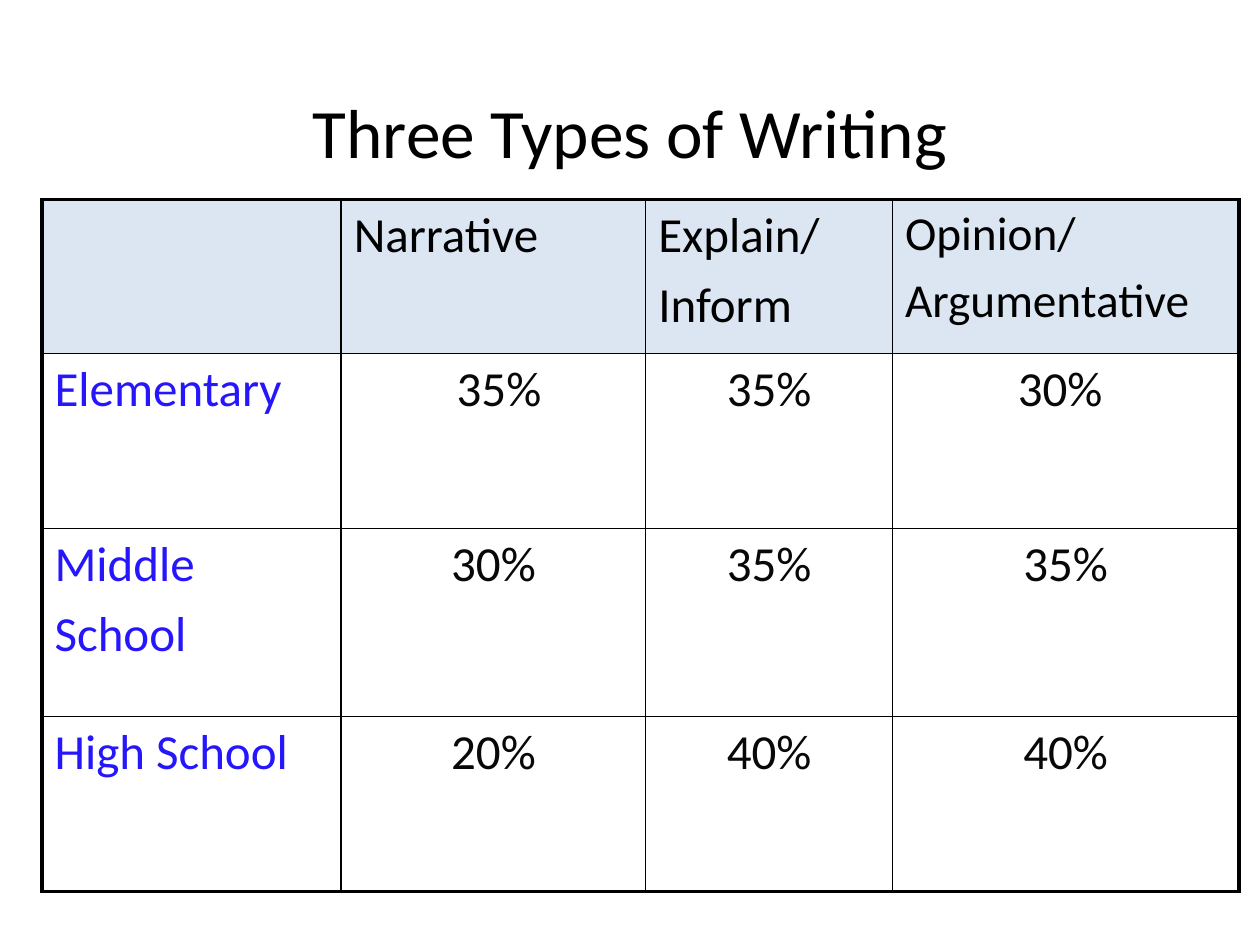
import pptx
import pptx.dml.color
import pptx.enum.text
import pptx.oxml
import pptx.oxml.ns
import pptx.util
from dataclasses import dataclass

Pt = pptx.util.Pt
Align = pptx.enum.text.PP_ALIGN
Anchor = pptx.enum.text.MSO_ANCHOR


@dataclass(frozen=True)
class Theme:
    font: str = "Calibri"
    title_size: float = 39.6
    cell_size: float = 28
    tight_size: float = 27
    ink: str = "000000"
    value: str = "080808"
    level: str = "2616FC"
    header_fill: str = "DCE6F2"
    outer_line: float = 2.25
    inner_line: float = 1
    space_before: float = 0.2  # share of the type size


class SlideBuilder:
    def __init__(self, page, theme):
        self.page = page
        self.theme = theme

    def set_text(self, frame, text, size, color, align):
        frame.text = text
        for index, para in enumerate(frame.paragraphs):
            para.alignment = align
            if index:
                para.space_before = Pt(size * self.theme.space_before)
            for span in para.runs:
                span.font.name = self.theme.font
                span.font.size = Pt(size)
                span.font.bold = False
                span.font.color.rgb = pptx.dml.color.RGBColor.from_string(color)

    def title(self, text, left, top, width, height):
        box = self.page.shapes.add_textbox(Pt(left), Pt(top), Pt(width), Pt(height))
        box.text_frame.word_wrap = True
        box.text_frame.vertical_anchor = Anchor.MIDDLE
        self.set_text(box.text_frame, text, self.theme.title_size, self.theme.ink, Align.CENTER)

    def borders(self, cell, widths):
        properties = cell._tc.get_or_add_tcPr()
        for index, (side, width) in enumerate(widths.items()):
            line = pptx.oxml.parse_xml(
                f'<a:ln{side} {pptx.oxml.ns.nsdecls("a")} w="{Pt(width)}">'
                f'<a:solidFill><a:srgbClr val="{self.theme.ink}"/></a:solidFill></a:ln{side}>')
            properties.insert(index, line)

    def table(self, rows, left, top, column_widths, row_heights):
        theme = self.theme
        last_row, last_column = len(row_heights) - 1, len(column_widths) - 1
        grid = self.page.shapes.add_table(
            len(row_heights), len(column_widths), Pt(left), Pt(top),
            Pt(sum(column_widths)), Pt(sum(row_heights))).table
        grid.first_row = grid.horz_banding = False
        for column, width in zip(grid.columns, column_widths):
            column.width = Pt(width)
        for row, height in zip(grid.rows, row_heights):
            row.height = Pt(height)

        for r, texts in enumerate(rows):
            for c, text in enumerate(texts):
                cell = grid.cell(r, c)
                size, color, align = theme.cell_size, theme.value, Align.CENTER
                if r == 0:
                    color, align = theme.ink, Align.LEFT
                    size = theme.tight_size if c == last_column else size
                    cell.fill.solid()
                    cell.fill.fore_color.rgb = pptx.dml.color.RGBColor.from_string(theme.header_fill)
                else:
                    cell.fill.background()
                    if c == 0:
                        color, align = theme.level, Align.LEFT
                if text:
                    self.set_text(cell.text_frame, text, size, color, align)
                outer_sides = {"L": c == 0, "R": c == last_column,
                               "T": r == 0, "B": r == last_row}
                self.borders(cell, {side: theme.outer_line if outer else theme.inner_line
                                    for side, outer in outer_sides.items()})


def main():
    deck = pptx.Presentation()
    deck.slide_width, deck.slide_height = Pt(720), Pt(540)
    builder = SlideBuilder(deck.slides.add_slide(deck.slide_layouts[6]), Theme())

    # Heading
    builder.title("Three Types of Writing", 36, 48, 648, 54)

    # Share of each writing type by school level
    rows = [
        ["", "Narrative", "Explain/\nInform", "Opinion/\nArgumentative"],
        ["Elementary", " 35%", "35%", "30% "],
        ["Middle\nSchool", "30%", "35%", "35%"],
        ["High School", "20%", "40%", "40%"],
    ]
    builder.table(rows, 24, 114, [171, 174, 141, 198], [88, 100, 107.5, 100])

    deck.save("out.pptx")


if __name__ == "__main__":
    main()
